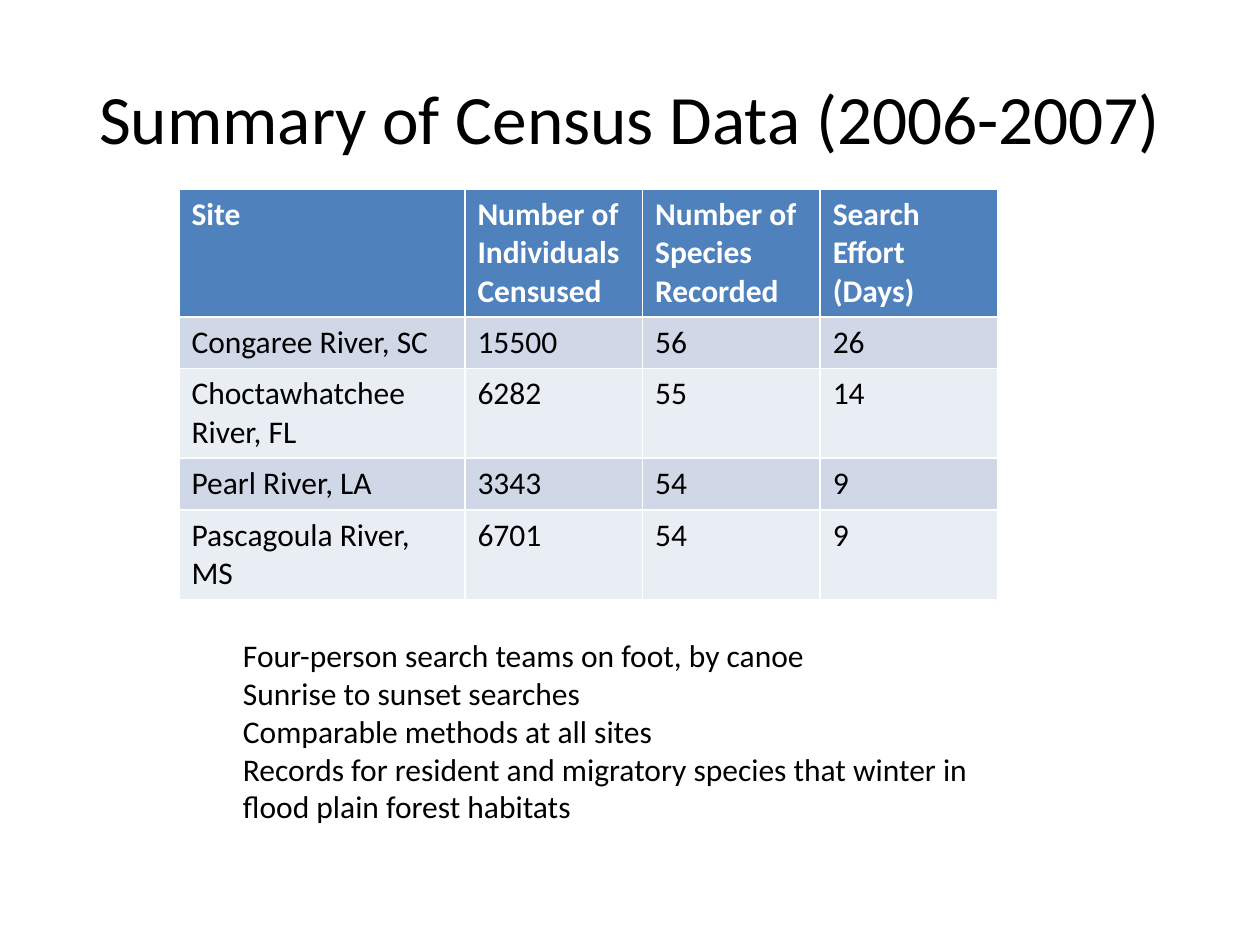
"""Build the census summary slide with its table and method notes."""
from pptx import Presentation
from pptx.dml.color import RGBColor
from pptx.enum.text import MSO_ANCHOR, PP_ALIGN
from pptx.util import Pt

PX = 9144
WHITE = RGBColor(0xFF, 0xFF, 0xFF)
BLACK = RGBColor(0x00, 0x00, 0x00)
BLUE = RGBColor(0x4F, 0x81, 0xBD)
BAND_DARK = RGBColor(0xD0, 0xD8, 0xE8)
BAND_LIGHT = RGBColor(0xE9, 0xED, 0xF4)

TITLE = {"name": "Calibri", "size": Pt(39.6), "bold": False}
HEADER = {"name": "Calibri", "size": Pt(18), "bold": True}
BODY = {"name": "Calibri", "size": Pt(18), "bold": False}

ROWS = [
    ("Site", "Number of Individuals Censused", "Number of Species Recorded", "Search Effort (Days)"),
    ("Congaree River, SC", "15500", "56", "26"),
    ("Choctawhatchee River, FL", "6282", "55", "14"),
    ("Pearl River, LA", "3343", "54", "9"),
    ("Pascagoula River, MS", "6701", "54", "9"),
]
COL_WIDTHS = [227, 141, 141, 141]
ROW_HEIGHT = 41
NOTES = [
    "Four-person search teams on foot, by canoe",
    "Sunrise to sunset searches",
    "Comparable methods at all sites",
    "Records for resident and migratory species that winter in flood plain forest habitats",
]


def px(*lengths):
    return [n * PX for n in lengths]


def write(p, text, fmt, color):
    r = p.add_run()
    r.text = text
    for key, value in fmt.items():
        setattr(r.font, key, value)
    r.font.color.rgb = color


prs = Presentation()
prs.slide_width, prs.slide_height = px(1000, 750)
s = prs.slides.add_slide(prs.slide_layouts[5])

title = s.shapes.title
title.left, title.top, title.width, title.height = px(50, 30, 900, 125)
tf = title.text_frame
tf.vertical_anchor = MSO_ANCHOR.MIDDLE
p = tf.paragraphs[0]
p.alignment = PP_ALIGN.CENTER
write(p, "Summary of Census Data (2006-2007)", TITLE, BLACK)

frame = s.shapes.add_table(
    len(ROWS), len(COL_WIDTHS), *px(142, 150, sum(COL_WIDTHS), ROW_HEIGHT * len(ROWS))
)
table = frame.table
for col, width in zip(table.columns, COL_WIDTHS):
    col.width = width * PX
for i, values in enumerate(ROWS):
    table.rows[i].height = ROW_HEIGHT * PX
    if i == 0:
        fill, fmt, color = BLUE, HEADER, WHITE
    else:
        fill, fmt, color = BAND_DARK if i % 2 else BAND_LIGHT, BODY, BLACK
    for j, value in enumerate(values):
        cell = table.cell(i, j)
        cell.fill.solid()
        cell.fill.fore_color.rgb = fill
        write(cell.text_frame.paragraphs[0], value, fmt, color)

notes = s.shapes.add_textbox(*px(183, 500, 642, 222))
tf = notes.text_frame
tf.word_wrap = True
for i, note in enumerate(NOTES):
    p = tf.add_paragraph() if i else tf.paragraphs[0]
    write(p, note, BODY, BLACK)

prs.save("out.pptx")
